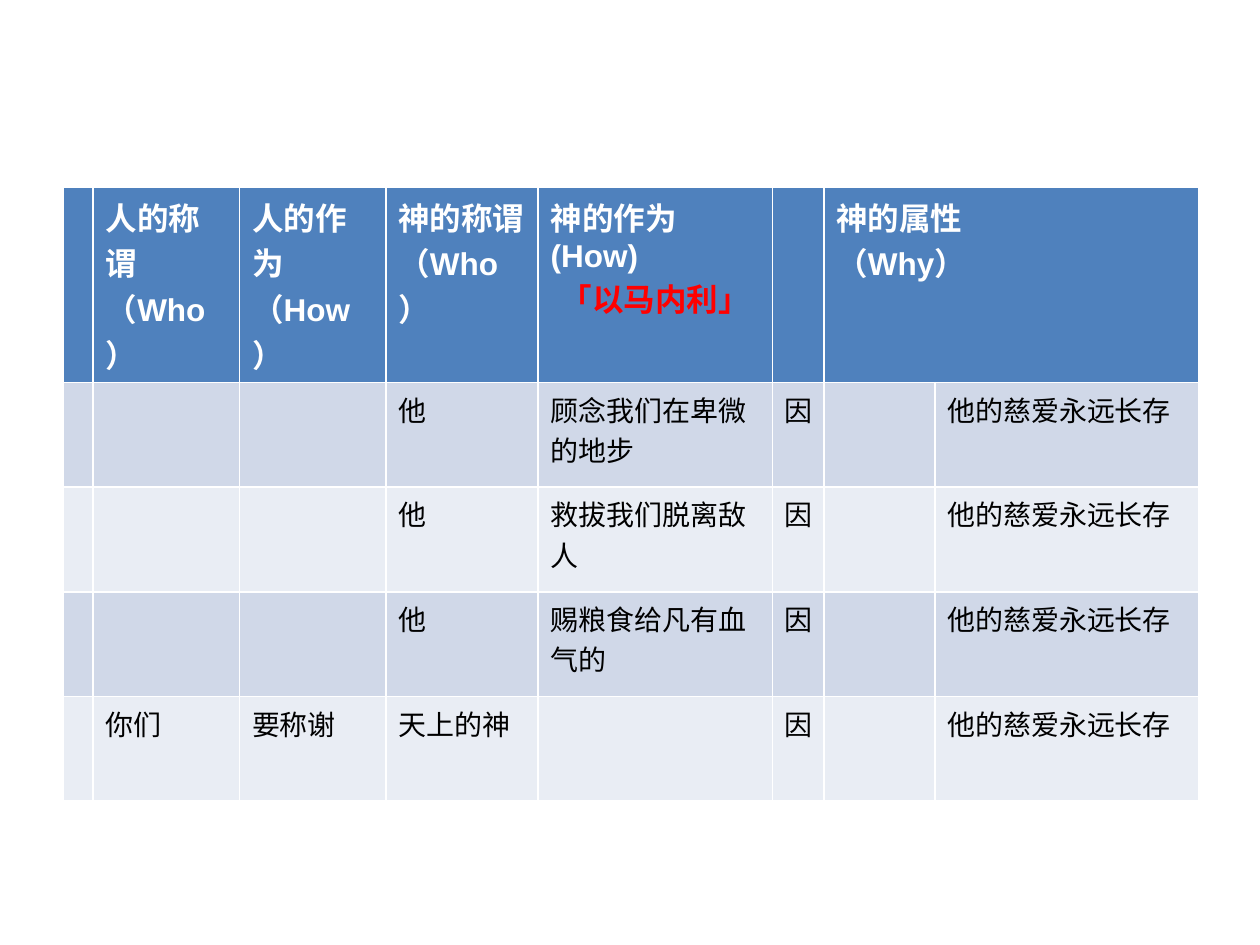
"""Build a slide with a table that analyses who acts, how, and why."""
from lxml import etree
from pptx import Presentation
from pptx.dml.color import RGBColor
from pptx.enum.text import PP_ALIGN
from pptx.oxml.ns import qn
from pptx.util import Cm, Pt

LEFT, CENTER = PP_ALIGN.LEFT, PP_ALIGN.CENTER
WHITE, BLACK, RED = "FFFFFF", "000000", "FF0000"
HEADER_FILL, BAND_FILLS = "4F81BD", ("D0D8E8", "E9EDF4")
COLUMN_WIDTHS = (0.58, 2.95, 2.95, 3.07, 4.72, 1.04, 2.24, 5.31)
ROW_HEIGHTS = (3.33, 2.11, 2.11, 2.11, 2.11)
REASON = ("因", "", "他的慈爱永远长存")
EMPHASIS = "「以马内利」"
ROWS = (
    ("", "人的称谓（Who）", "人的作为（How）", "神的称谓（Who）",
     "神的作为(How)\n" + EMPHASIS, "", "神的属性\n（Why）", ""),
    ("", "", "", "他", "顾念我们在卑微的地步", *REASON),
    ("", "", "", "他", "救拔我们脱离敌人", *REASON),
    ("", "", "", "他", "赐粮食给凡有血气的", *REASON),
    ("", "你们", "要称谢", "天上的神", "", *REASON),
)
HEADER_FORMAT = {"name": "Arial", "size": Pt(18), "bold": True}
BODY_FORMAT = {"name": "Arial", "size": Pt(16), "bold": False}


def color(value):
    return RGBColor.from_string(value)


def write(para, text, text_color, values):
    span = para.add_run()
    span.text = text
    for name, value in values.items():
        setattr(span.font, name, value)
    span.font.color.rgb = color(text_color)
    properties = span._r.get_or_add_rPr()
    etree.SubElement(properties, qn("a:ea"), typeface="Noto Sans CJK SC")


deck = Presentation()
deck.slide_width, deck.slide_height = Cm(25.4), Cm(19.05)
page = deck.slides.add_slide(deck.slide_layouts[6])

table = page.shapes.add_table(
    len(ROWS), len(COLUMN_WIDTHS), Cm(1.27), Cm(3.78),
    Cm(sum(COLUMN_WIDTHS)), Cm(sum(ROW_HEIGHTS))).table
for column, width in zip(table.columns, COLUMN_WIDTHS):
    column.width = Cm(width)
for row, height in zip(table.rows, ROW_HEIGHTS):
    row.height = Cm(height)
table.cell(0, 6).merge(table.cell(0, 7))

for row_index, texts in enumerate(ROWS):
    is_header = row_index == 0
    fill = HEADER_FILL if is_header else BAND_FILLS[(row_index - 1) % 2]
    values = HEADER_FORMAT if is_header else BODY_FORMAT
    for column_index, text in enumerate(texts):
        cell = table.cell(row_index, column_index)
        cell.fill.solid()
        cell.fill.fore_color.rgb = color(fill)
        if not text:
            continue
        for line_index, line in enumerate(text.split("\n")):
            frame = cell.text_frame
            para = frame.add_paragraph() if line_index else frame.paragraphs[0]
            para.alignment = CENTER if line == EMPHASIS else LEFT
            text_color = WHITE if is_header else BLACK
            write(para, line, RED if line == EMPHASIS else text_color, values)

deck.save("out.pptx")
